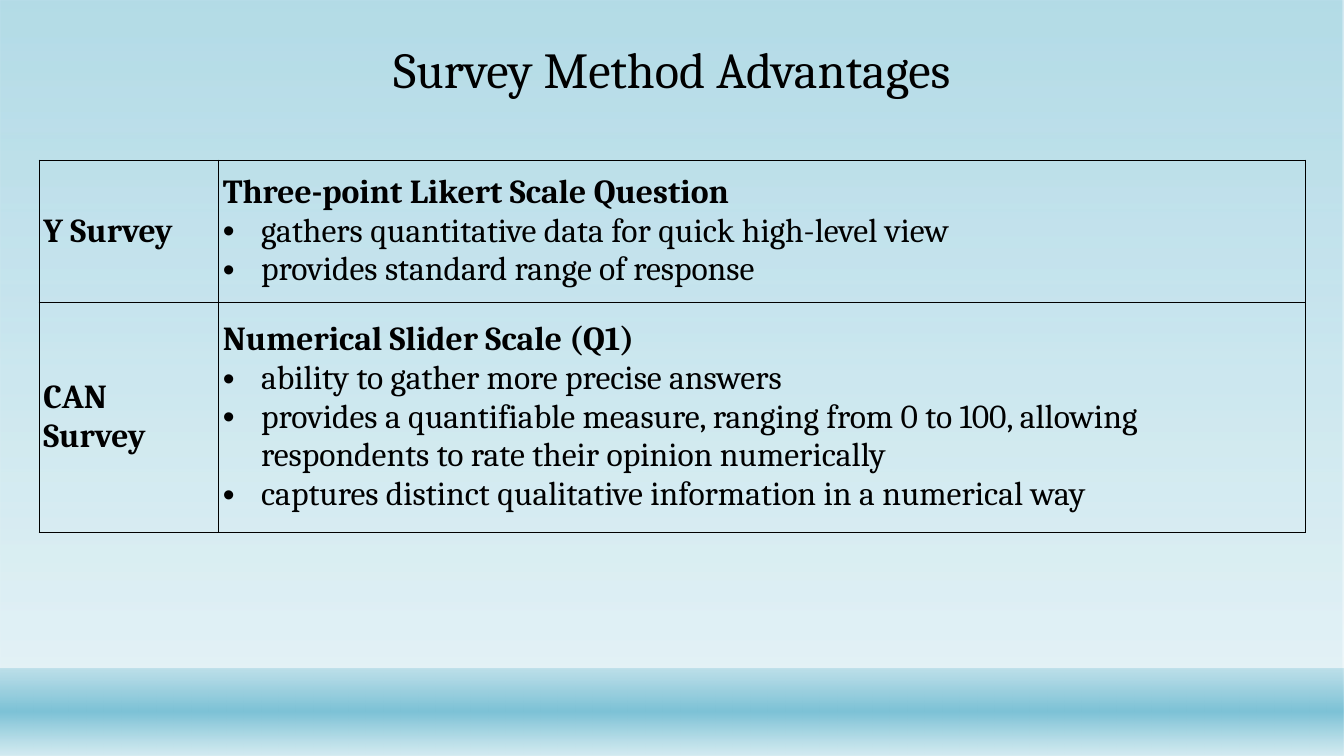
from lxml import etree
from pptx import Presentation
from pptx import util as u
from pptx.dml.color import RGBColor
from pptx.enum import shapes, text
from pptx.oxml import ns

BLACK = RGBColor(0x00, 0x00, 0x00)
TEAL = RGBColor(0x7D, 0xC2, 0xD6)
PALE = RGBColor(0xD4, 0xEB, 0xF1)
FONT = "Cambria"

# Gradient stops: position %, colour, opacity %
SKY = [(0, TEAL, 58), (88, PALE, 65)]
WATER = [(1, TEAL, 38), (49, TEAL, 100), (100, PALE, 89)]

SURVEYS = [
    ("Y Survey", "Three-point Likert Scale Question", [
        "gathers quantitative data for quick high-level view",
        "provides standard range of response",
    ]),
    ("CAN Survey", "Numerical Slider Scale (Q1)", [
        "ability to gather more precise answers",
        "provides a quantifiable measure, ranging from 0 to 100, allowing "
        "respondents to rate their opinion numerically",
        "captures distinct qualitative information in a numerical way",
    ]),
]
COLUMN_WIDTHS = [1.78, 10.78]
ROW_HEIGHTS = [1.41, 2.28]


def add_element(parent, tag, **attributes):
    element = etree.SubElement(parent, ns.qn(tag))
    for name, value in attributes.items():
        element.set(name, str(value))
    return element


def apply_format(target, values):
    for name, value in values.items():
        setattr(target, name, value)


def format_font(paragraph, size, bold):
    apply_format(paragraph.font, {"name": FONT, "size": u.Pt(size), "bold": bold})
    paragraph.font.color.rgb = BLACK


def add_gradient_band(slide, left, top, width, height, stops):
    """Add a borderless rectangle shaded from top to bottom."""
    band = slide.shapes.add_shape(
        shapes.MSO_SHAPE.RECTANGLE, *map(u.Inches, (left, top, width, height)))
    band.shadow.inherit = False
    band.line.fill.background()
    band.fill.gradient()
    gradient = band.fill._xPr.find(ns.qn("a:gradFill"))
    for child in list(gradient):
        gradient.remove(child)
    stop_list = add_element(gradient, "a:gsLst")
    for position, color, opacity in stops:
        stop = add_element(stop_list, "a:gs", pos=position * 1000)
        fill = add_element(stop, "a:srgbClr", val=color)
        add_element(fill, "a:alpha", val=opacity * 1000)
    add_element(gradient, "a:lin", ang=5400000, scaled=0)


def place_title(slide, left, top, width, height):
    title = slide.shapes.title
    apply_format(title, dict(zip(
        ("left", "top", "width", "height"),
        map(u.Inches, (left, top, width, height)))))
    frame = title.text_frame
    frame.text = "Survey Method Advantages"
    apply_format(frame, {"vertical_anchor": text.MSO_ANCHOR.BOTTOM,
                         "word_wrap": True,
                         "auto_size": text.MSO_AUTO_SIZE.NONE})
    paragraph = frame.paragraphs[0]
    apply_format(paragraph, {"alignment": text.PP_ALIGN.CENTER,
                             "line_spacing": 0.9})
    format_font(paragraph, 36, False)


def add_bullet(paragraph):
    properties = paragraph._p.get_or_add_pPr()
    properties.set("marL", str(u.Inches(0.38)))
    properties.set("indent", str(-u.Inches(0.38)))
    add_element(properties, "a:buFont", typeface="Arial")
    add_element(properties, "a:buChar", char="•")


def fill_cell(cell, heading, bullets=()):
    """Write a bold heading and its bullets in a bordered, unfilled cell."""
    apply_format(cell, {"margin_left": u.Inches(0.04),
                        "margin_right": u.Inches(0.04),
                        "margin_top": 0, "margin_bottom": 0,
                        "vertical_anchor": text.MSO_ANCHOR.MIDDLE})
    frame = cell.text_frame
    frame.text = heading
    format_font(frame.paragraphs[0], 24, True)
    for bullet in bullets:
        paragraph = frame.add_paragraph()
        paragraph.text = bullet
        add_bullet(paragraph)
        format_font(paragraph, 24, False)
    properties = cell._tc.get_or_add_tcPr()
    for side in ("a:lnL", "a:lnR", "a:lnT", "a:lnB"):
        line = add_element(properties, side, w=u.Pt(1))
        fill = add_element(line, "a:solidFill")
        add_element(fill, "a:srgbClr", val=BLACK)
    cell.fill.background()


def add_survey_table(slide, left, top):
    size = sum(COLUMN_WIDTHS), sum(ROW_HEIGHTS)
    table = slide.shapes.add_table(
        len(SURVEYS), len(COLUMN_WIDTHS),
        *map(u.Inches, (left, top, *size))).table
    apply_format(table, {"first_row": False, "horz_banding": False})
    for column, width in zip(table.columns, COLUMN_WIDTHS):
        column.width = u.Inches(width)
    for row, height, survey in zip(table.rows, ROW_HEIGHTS, SURVEYS):
        row.height = u.Inches(height)
        name, heading, bullets = survey
        fill_cell(row.cells[0], name)
        fill_cell(row.cells[1], heading, bullets)


def main():
    presentation = Presentation()
    presentation.slide_width = u.Inches(13.33)
    presentation.slide_height = u.Inches(7.5)
    slide = presentation.slides.add_slide(presentation.slide_layouts[5])
    add_gradient_band(slide, 0, 0, 13.33, 7.5, SKY)
    add_gradient_band(slide, 0, 6.63, 13.33, 0.87, WATER)
    add_survey_table(slide, 0.39, 1.59)
    place_title(slide, 0.87, 0.37, 11.59, 0.67)
    # Bring the title in front of the background bands
    slide.shapes._spTree.append(slide.shapes.title._element)
    presentation.save("out.pptx")


if __name__ == "__main__":
    main()
